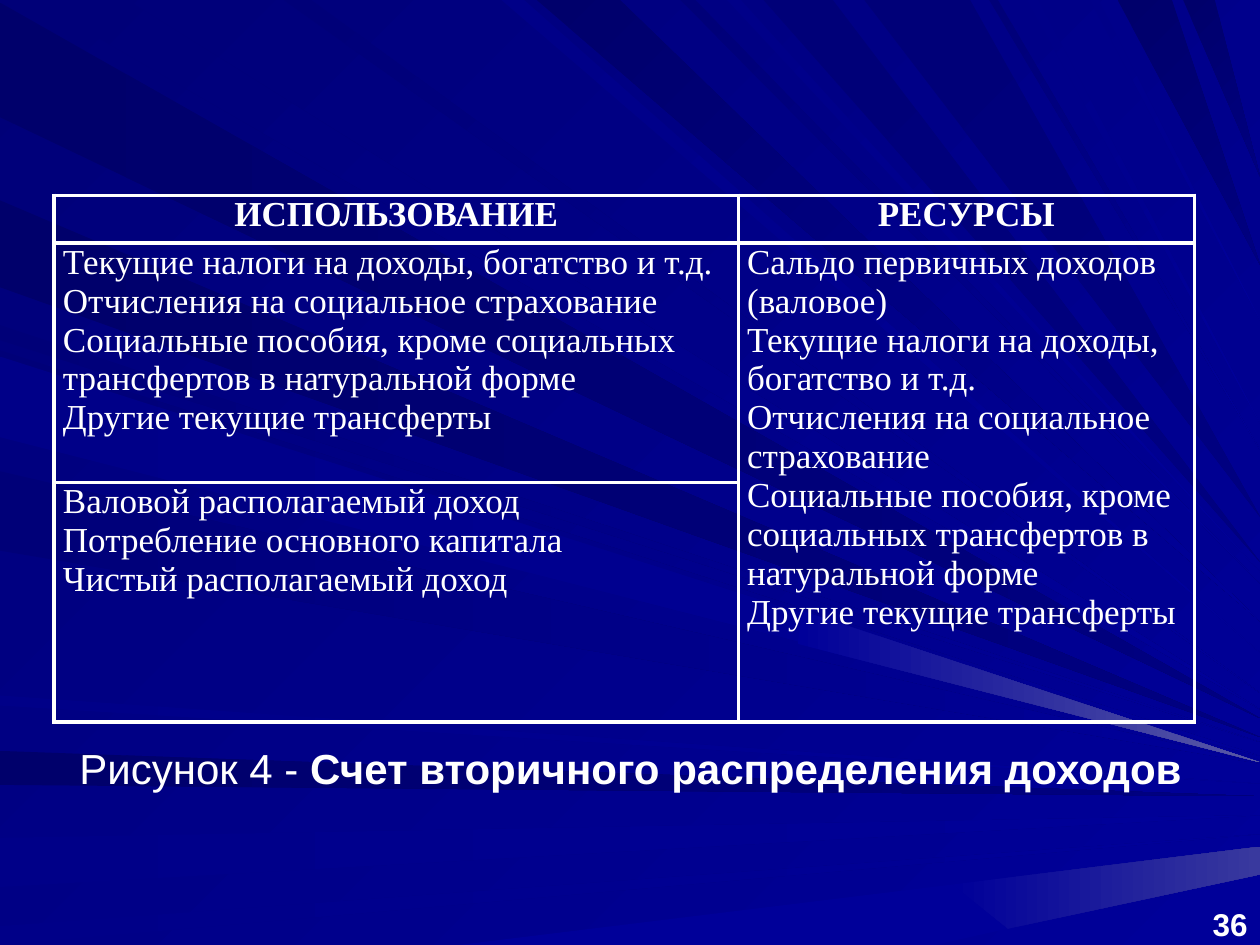
from lxml.etree import SubElement
from pptx import Presentation
from pptx.dml.color import RGBColor
from pptx.enum.text import MSO_ANCHOR, MSO_AUTO_SIZE, PP_ALIGN
from pptx.oxml.ns import qn
from pptx.util import Inches, Pt

WHITE = RGBColor(0xFF, 0xFF, 0xFF)
DARK = RGBColor(0, 0, 0x6B)
DUSK = RGBColor(0, 0, 0x78)
NAVY = RGBColor(0, 0, 0x80)
DIM = RGBColor(0, 0, 0x88)
ROYAL = RGBColor(0, 0, 0x99)
GLOW = RGBColor(0x39, 0x39, 0x9E)
MIST = RGBColor(0x5A, 0x5A, 0xA6)

WIDE, HIGH = 10, 7.5

LEFT_RAYS = [
    (DARK, NAVY, 0.02, 0.93, 5.7),
    (DARK, NAVY, 5.96, 6.23, 6.32),
    (DIM, ROYAL, 6.65, 7.04, 6.47),
    (DIM, ROYAL, 7.35, 7.5, 6.62),
    (DUSK, ROYAL, 2.58, 2.7, 5.89),
    (DARK, NAVY, 1.59, 2.28, 5.85),
    (DUSK, ROYAL, 2.78, 3.42, 6),
    (DUSK, ROYAL, 3.74, 4.37, 6.06),
    (DIM, ROYAL, 5.52, 5.6, 6.22),
    (DIM, ROYAL, 2.83, 3.47, 6.03),
]
TOP_RAYS = [
    (DUSK, ROYAL, 0.26, 1.01, 5.63),
    (DUSK, ROYAL, 2.25, 2.47, 5.5),
    (DIM, ROYAL, 3.98, 4.16, 5.18),
    (DARK, ROYAL, 4.26, 4.92, 4.93),
    (DUSK, ROYAL, 5.4, 5.52, 4.63),
    (DUSK, NAVY, 6.06, 6.61, 4.46),
    (DIM, ROYAL, 5.77, 5.88, 4.54),
    (DUSK, NAVY, 6.86, 7.7, 4.1),
    (DUSK, ROYAL, 7.85, 7.92, 3.57),
    (DIM, ROYAL, 8.15, 8.24, 3.36),
    (DIM, ROYAL, 8.65, 8.72, 2.54),
    (DARK, NAVY, 8.87, 9.3, 2.1),
    (DARK, NAVY, 9.39, 9.64, 1.4),
]
GLEAMS = [
    (ROYAL, ROYAL, [(3.64, HIGH), (7.42, HIGH), (8, 7.37), (7.56, 7.02)]),
    (ROYAL, GLOW, [(WIDE, 6.94), (WIDE, 6.72), (7.56, 7.02), (8, 7.37)]),
    (ROYAL, MIST, [(6.37, 4.85), (6.33, 5.11), (WIDE, 6.05)]),
]

TAXES = "Текущие налоги на доходы, богатство и т.д."
SHARED = """Отчисления на социальное страхование
Социальные пособия, кроме социальных трансфертов в натуральной форме
Другие текущие трансферты"""
CELLS = {
    (0, 0): "ИСПОЛЬЗОВАНИЕ",
    (0, 1): "РЕСУРСЫ",
    (1, 0): f"{TAXES}\n{SHARED}",
    (1, 1): f"Сальдо первичных доходов (валовое)\n{TAXES}\n{SHARED}",
    (2, 0): "Валовой располагаемый доход\nПотребление основного капитала\nЧистый располагаемый доход",
}


def write(par, text, font="Arial", size=18, bold=False, color=WHITE, align=PP_ALIGN.LEFT):
    par.alignment = align
    for index, line in enumerate(text.split("\n")):
        if index:
            par.add_line_break()
        run = par.add_run()
        run.text = line
        run.font.name = font
        run.font.size = Pt(size)
        run.font.bold = bold
        run.font.color.rgb = color


def paint(fill, start, end, angle):
    if start == end:
        fill.solid()
        fill.fore_color.rgb = start
        return
    fill.gradient()
    fill.gradient_angle = -angle % 360
    for stop, color in zip(fill.gradient_stops, (start, end)):
        stop.color.rgb = color


class Deck:
    face = "Times New Roman"
    rule = 2.25

    def __init__(self, show):
        self.slide = show.slides.add_slide(show.slide_layouts[6])
        self.shapes = self.slide.shapes

    def ground(self, start, end, angle):
        paint(self.slide.background.fill, start, end, angle)

    def ray(self, start, end, points, angle=0):
        first, *rest = [(Inches(x), Inches(y)) for x, y in points]
        pen = self.shapes.build_freeform(*first)
        pen.add_line_segments(rest, close=True)
        shape = pen.convert_to_shape()
        shape.shadow.inherit = False
        shape.line.fill.background()
        paint(shape.fill, start, end, angle)

    def label(self, left, top, width, height, parts, align, anchor=MSO_ANCHOR.TOP, **style):
        box = self.shapes.add_textbox(Inches(left), Inches(top), Inches(width), Inches(height))
        frame = box.text_frame
        frame.word_wrap = True
        frame.auto_size = MSO_AUTO_SIZE.NONE
        frame.vertical_anchor = anchor
        for text, bold in parts:
            write(frame.paragraphs[0], text, bold=bold, align=align, **style)

    def edge(self, cell):
        props = cell._tc.get_or_add_tcPr()
        for side in ("a:lnL", "a:lnR", "a:lnT", "a:lnB"):
            line = SubElement(props, qn(side), w=str(Pt(self.rule)))
            fill = SubElement(line, qn("a:solidFill"))
            SubElement(fill, qn("a:srgbClr"), val=str(WHITE))

    def table(self, left, top, widths, heights, cells):
        grid = self.shapes.add_table(
            len(heights), len(widths), Inches(left), Inches(top),
            Inches(sum(widths)), Inches(sum(heights))).table
        grid.first_row = grid.horz_banding = False
        for column, width in zip(grid.columns, widths):
            column.width = Inches(width)
        for row, height in zip(grid.rows, heights):
            row.height = Inches(height)
        for cell in grid.iter_cells():
            self.edge(cell)
            cell.fill.background()
            cell.margin_left = cell.margin_right = Inches(0.07)
            cell.margin_top = cell.margin_bottom = 0
        grid.cell(1, 1).merge(grid.cell(2, 1))
        for (row, column), text in cells.items():
            head = row == 0
            write(grid.cell(row, column).text_frame.paragraphs[0], text, font=self.face, size=20,
                  bold=head, align=PP_ALIGN.CENTER if head else PP_ALIGN.LEFT)


def main():
    show = Presentation()
    show.slide_width, show.slide_height = Inches(WIDE), Inches(HIGH)
    deck = Deck(show)
    deck.ground(DUSK, ROYAL, 45)
    for start, end, near, far, tip in LEFT_RAYS:
        deck.ray(start, end, [(0, near), (0, far), (WIDE, tip)])
    for start, end, near, far, tip in TOP_RAYS:
        deck.ray(start, end, [(near, 0), (far, 0), (WIDE, tip)], angle=45)
    for gleam in GLEAMS:
        deck.ray(*gleam)
    deck.label(9.49, 7.14, 0.51, 0.39, [("36", True)], PP_ALIGN.RIGHT, MSO_ANCHOR.BOTTOM)
    deck.label(0.2, 5.84, 9.61, 0.5,
               [("Рисунок 4 ‑ ", False), ("Счет вторичного распределения доходов", True)],
               PP_ALIGN.CENTER, size=24)
    deck.table(0.43, 1.55, [5.43, 3.62], [0.38, 1.9, 1.9], CELLS)
    show.save("out.pptx")


if __name__ == "__main__":
    main()
